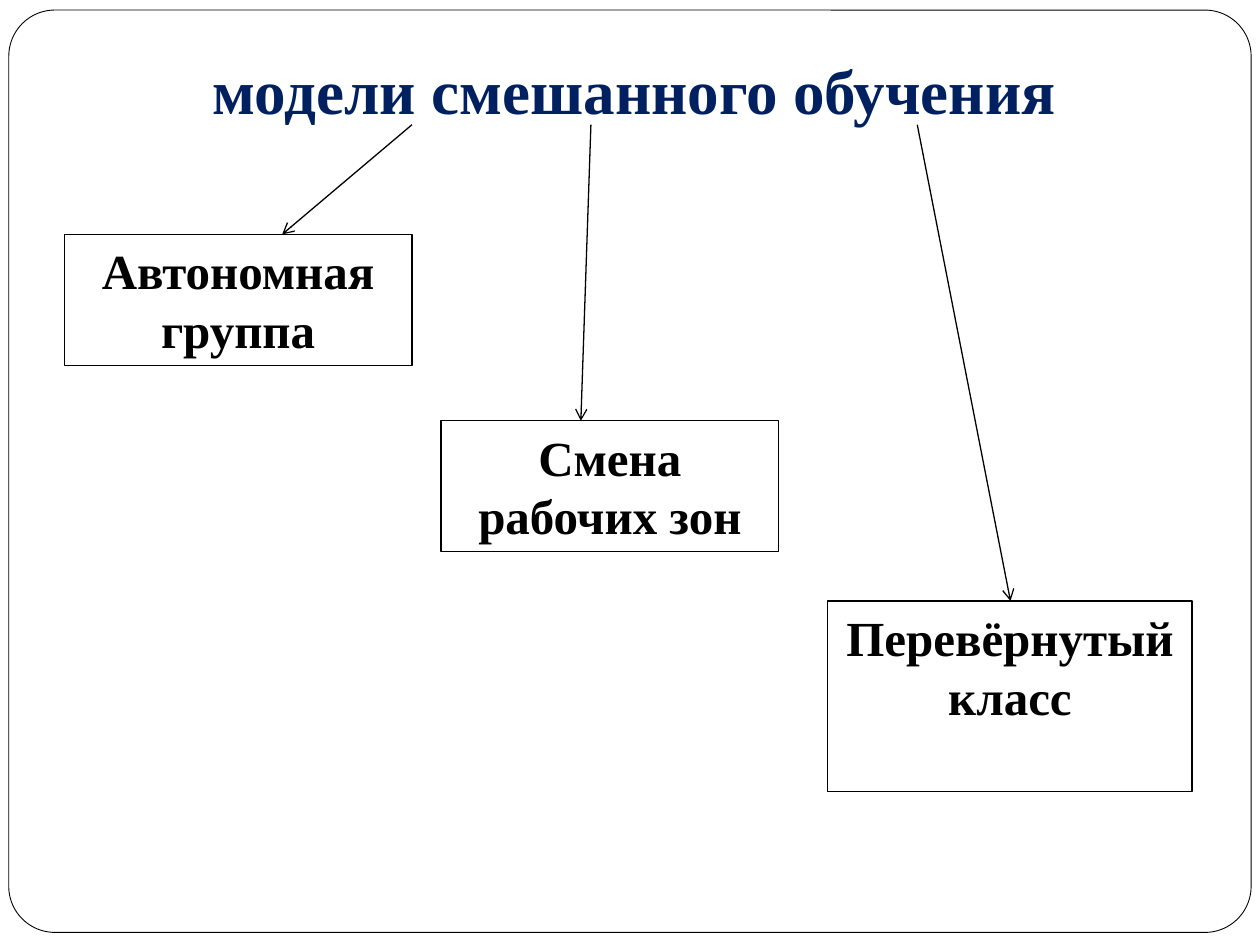
import pptx
import pptx.util
import pptx.dml.color
import pptx.enum.shapes
import pptx.enum.text
import pptx.oxml.ns
import lxml.etree
from dataclasses import dataclass

Inches = pptx.util.Inches
Shapes = pptx.enum.shapes.MSO_SHAPE


@dataclass(frozen=True)
class Theme:
    font: str = "Times New Roman"
    title_color: str = "002060"
    ink: str = "000000"
    paper: str = "FFFFFF"
    title_size: float = 36
    model_size: float = 28
    frame_line: float = 0.5
    model_line: float = 0.75


THEME = Theme()
TITLE = "модели смешанного обучения"
TITLE_AREA = (0.35, 0.36, 9.37, 6.85)
FRAME_AREA = (0.07, 0.08, 9.86, 7.32)
ARROW_TOP = 0.99
MODELS = [
    {"text": "Автономная группа", "area": (0.51, 1.86, 2.76, 1.04), "arrow": (3.27, 2.24)},
    {"text": "Смена рабочих зон", "area": (3.5, 3.34, 2.68, 1.04), "arrow": (4.69, 4.61)},
    {"text": "Перевёрнутый класс", "area": (6.57, 4.77, 2.89, 1.51), "arrow": (7.28, 8.02)},
]


def rgb(value):
    return pptx.dml.color.RGBColor.from_string(value)


def set_line(line, width):
    line.color.rgb = rgb(THEME.ink)
    line.width = pptx.util.Pt(width)


def write_text(shape, text, *, size, color, space_before=0):
    frame = shape.text_frame
    frame.word_wrap = True
    frame.vertical_anchor = pptx.enum.text.MSO_ANCHOR.TOP
    paragraph = frame.paragraphs[0]
    paragraph.alignment = pptx.enum.text.PP_ALIGN.CENTER
    paragraph.space_before = pptx.util.Pt(space_before)
    run = paragraph.add_run()
    run.text = text
    run.font.name = THEME.font
    run.font.size = pptx.util.Pt(size)
    run.font.bold = True
    run.font.color.rgb = rgb(color)


def add_box(slide, preset, area, *, width, fill=None):
    shape = slide.shapes.add_shape(preset, *map(Inches, area))
    shape.shadow.inherit = False
    if fill:
        shape.fill.solid()
        shape.fill.fore_color.rgb = rgb(fill)
    else:
        shape.fill.background()
    set_line(shape.line, width)
    return shape


def add_arrow(slide, start, end):
    connector = slide.shapes.add_connector(
        pptx.enum.shapes.MSO_CONNECTOR.STRAIGHT, *map(Inches, (*start, *end))
    )
    set_line(connector.line, THEME.model_line)
    properties = connector._element.spPr
    qualify = pptx.oxml.ns.qn
    line = properties.find(qualify("a:ln"))
    lxml.etree.SubElement(line, qualify("a:tailEnd"), type="arrow")
    lxml.etree.SubElement(properties, qualify("a:effectLst"))


def main():
    presentation = pptx.Presentation()
    presentation.slide_width = Inches(10)
    presentation.slide_height = Inches(7.5)
    slide = presentation.slides.add_slide(presentation.slide_layouts[6])

    frame = add_box(
        slide, Shapes.ROUNDED_RECTANGLE, FRAME_AREA, width=THEME.frame_line, fill=THEME.paper
    )
    frame.adjustments[0] = 0.05

    title = slide.shapes.add_textbox(*map(Inches, TITLE_AREA))
    write_text(title, TITLE, size=THEME.title_size, color=THEME.title_color, space_before=5.8)

    for model in MODELS:
        box = add_box(slide, Shapes.RECTANGLE, model["area"], width=THEME.model_line)
        write_text(box, model["text"], size=THEME.model_size, color=THEME.ink)

    for model in MODELS:
        start_x, end_x = model["arrow"]
        add_arrow(slide, (start_x, ARROW_TOP), (end_x, model["area"][1]))

    presentation.save("out.pptx")


if __name__ == "__main__":
    main()
